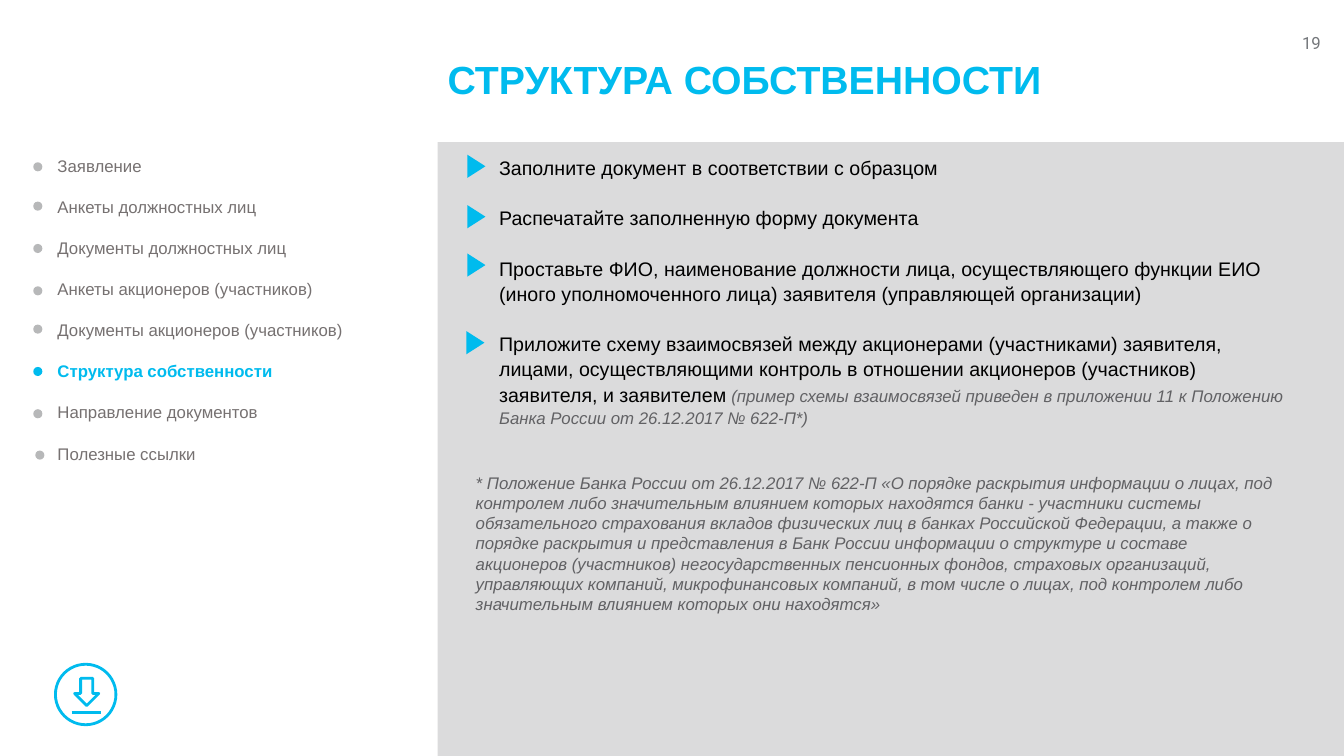
from dataclasses import dataclass

from lxml import etree
from pptx import Presentation
from pptx.dml.color import RGBColor
from pptx.enum import shapes, text
from pptx.oxml import ns
from pptx.util import Inches, Pt


@dataclass(frozen=True)
class Theme:
    """Colours, fonts and type sizes of the slide."""
    accent: str = "00BBEE"
    panel: str = "DBDBDC"
    dot: str = "B7B8B9"
    black: str = "000000"
    menu: str = "767171"
    note: str = "616164"
    number: str = "74777B"
    face: str = "Arial"
    number_face: str = "Roboto"
    title_size: int = 28
    step_size: int = 14
    small_size: int = 12
    line_width: int = 2


THEME = Theme()
SHAPE = shapes.MSO_SHAPE
MENU = [
    ("Заявление", 0.33, 1.61),
    ("Анкеты должностных лиц", 0.33, 2.0),
    ("Документы должностных лиц", 0.33, 2.42),
    ("Анкеты акционеров (участников)", 0.33, 2.84),
    ("Документы акционеров (участников)", 0.33, 3.22),
    ("Структура собственности", 0.33, 3.64),
    ("Направление документов", 0.33, 4.06),
    ("Полезные ссылки", 0.35, 4.47),
]
CURRENT = "Структура собственности"
STEPS = [
    ("Заполните документ в соответствии с образцом", "", 4.61, 1.56),
    ("Распечатайте заполненную форму документа", "", 4.61, 2.06),
    ("Проставьте ФИО, наименование должности лица, осуществляющего функции ЕИО "
     "(иного уполномоченного лица) заявителя (управляющей организации)", "", 4.61, 2.54),
    ("Приложите схему взаимосвязей между акционерами (участниками) заявителя, "
     "лицами, осуществляющими контроль в отношении акционеров (участников) "
     "заявителя, и заявителем",
     " (пример схемы взаимосвязей приведен в приложении 11 к Положению "
     "Банка России от 26.12.2017 № 622-П*)", 4.6, 3.31),
]
FOOTNOTE = (
    "* Положение Банка России от 26.12.2017 № 622-П «О порядке раскрытия информации "
    "о лицах, под контролем либо значительным влиянием которых находятся банки - "
    "участники системы обязательного страхования вкладов физических лиц в банках "
    "Российской Федерации, а также о порядке раскрытия и представления в Банк России "
    "информации о структуре и составе акционеров (участников) негосударственных "
    "пенсионных фондов, страховых организаций, управляющих компаний, "
    "микрофинансовых компаний, в том числе о лицах, под контролем либо значительным "
    "влиянием которых они находятся»"
)


def style(font, size, color, bold=False, italic=False, face=THEME.face):
    """Set every property of a font."""
    font.name, font.size = face, Pt(size)
    font.bold, font.italic = bold, italic
    font.color.rgb = RGBColor.from_string(color)


def place(box, left, top, width, height):
    """Move and size a box, and let its text wrap."""
    box.left, box.top = Inches(left), Inches(top)
    box.width, box.height = Inches(width), Inches(height)
    box.text_frame.word_wrap = True
    box.text_frame.auto_size = text.MSO_AUTO_SIZE.NONE


def add_list_items(box, items, indent, gap):
    """Add one unbulleted paragraph per item and return the paragraphs."""
    frame = box.text_frame
    paras = [frame.paragraphs[0]] + [frame.add_paragraph() for _ in items[1:]]
    for para, item in zip(paras, items):
        para.add_run().text = item
        properties = para._p.get_or_add_pPr()
        properties.set("marL", str(Inches(indent)))
        properties.set("indent", "0")
        etree.SubElement(properties, ns.qn("a:buNone"))
        para.space_before, para.space_after = Pt(0), Pt(gap)
    return paras


def add_text(page, words, frame, size, color, align=text.PP_ALIGN.LEFT, **look):
    """Add a text box with one paragraph."""
    box = page.shapes.add_textbox(0, 0, 0, 0)
    place(box, *frame)
    para = box.text_frame.paragraphs[0]
    para.text, para.alignment = words, align
    style(para.font, size, color, **look)


def add_figure(page, kind, frame, fill=None, line=None, rotation=0):
    """Add a preset shape that is filled, outlined or both."""
    figure = page.shapes.add_shape(kind, *map(Inches, frame))
    figure.shadow.inherit = False
    figure.rotation = rotation
    if fill:
        figure.fill.solid()
        figure.fill.fore_color.rgb = RGBColor.from_string(fill)
    else:
        figure.fill.background()
    if line:
        figure.line.color.rgb = RGBColor.from_string(line)
        figure.line.width = Pt(THEME.line_width)
    else:
        figure.line.fill.background()


def add_title(page):
    """Fill the title placeholder."""
    title = page.shapes.title
    place(title, 4.34, 0.31, 8.9, 1.01)
    title.text_frame.vertical_anchor = text.MSO_ANCHOR.MIDDLE
    para = title.text_frame.paragraphs[0]
    para.text, para.alignment = "СТРУКТУРА СОБСТВЕННОСТИ", text.PP_ALIGN.LEFT
    para.line_spacing = 0.9
    style(para.font, THEME.title_size, THEME.accent, bold=True)


def add_menu(page, box):
    """Fill the section menu and mark the current section."""
    place(box, 0.47, 1.49, 3.69, 3.19)
    paras = add_list_items(box, [name for name, *_ in MENU], indent=0, gap=15)
    for para, (name, left, top) in zip(paras, MENU):
        active = name == CURRENT
        style(para.font, THEME.small_size, THEME.accent if active else THEME.menu, bold=active)
        add_figure(page, SHAPE.OVAL, (left, top, 0.09, 0.09),
                   THEME.accent if active else THEME.dot)


def add_steps(page, box):
    """Fill the list of steps and set a triangle beside each."""
    place(box, 4.35, 1.48, 8.49, 3.09)
    paras = add_list_items(box, [step for step, *_ in STEPS], indent=0.5, gap=18)
    for para, (_, aside, left, top) in zip(paras, STEPS):
        para.line_spacing = 1.07
        if aside:
            style(para.runs[0].font, THEME.step_size, THEME.black)
            span = para.add_run()
            span.text = aside
            style(span.font, THEME.small_size, THEME.note, italic=True)
        else:
            style(para.font, THEME.step_size, THEME.black)
        add_figure(page, SHAPE.ISOSCELES_TRIANGLE, (left, top, 0.23, 0.18),
                   THEME.accent, rotation=90)


def add_download_icon(page):
    """Draw the ring, the arrow and the base line of the download icon."""
    add_figure(page, SHAPE.OVAL, (0.55, 6.59, 0.6, 0.6), line=THEME.accent)
    add_figure(page, SHAPE.DOWN_ARROW, (0.74, 6.73, 0.24, 0.27), line=THEME.accent)
    base = page.shapes.add_connector(
        shapes.MSO_CONNECTOR.STRAIGHT, *map(Inches, (0.71, 7.07, 1, 7.07)))
    base.line.color.rgb = RGBColor.from_string(THEME.accent)
    base.line.width = Pt(THEME.line_width)
    etree.SubElement(base._element.spPr, ns.qn("a:effectLst"))


def add_panel(page):
    """Add the grey panel behind everything else."""
    add_figure(page, SHAPE.RECTANGLE, (4.34, 1.41, 8.99, 6.09), THEME.panel)
    tree = page.shapes._spTree
    tree.insert(2, tree[-1])


def main():
    """Build the slide and save the deck."""
    deck = Presentation()
    deck.slide_width, deck.slide_height = Inches(13.33), Inches(7.5)
    page = deck.slides.add_slide(deck.slide_layouts.get_by_name("Two Content"))
    _, menu, steps = page.placeholders
    add_panel(page)
    add_title(page)
    add_menu(page, menu)
    add_steps(page, steps)
    add_text(page, FOOTNOTE, (4.62, 4.64, 8.21, 1.51),
             THEME.small_size, THEME.note, italic=True)
    add_text(page, "19", (10.78, 0.28, 2.42, 0.3), THEME.small_size, THEME.number,
             text.PP_ALIGN.RIGHT, face=THEME.number_face)
    add_download_icon(page)
    deck.save("out.pptx")


if __name__ == "__main__":
    main()
